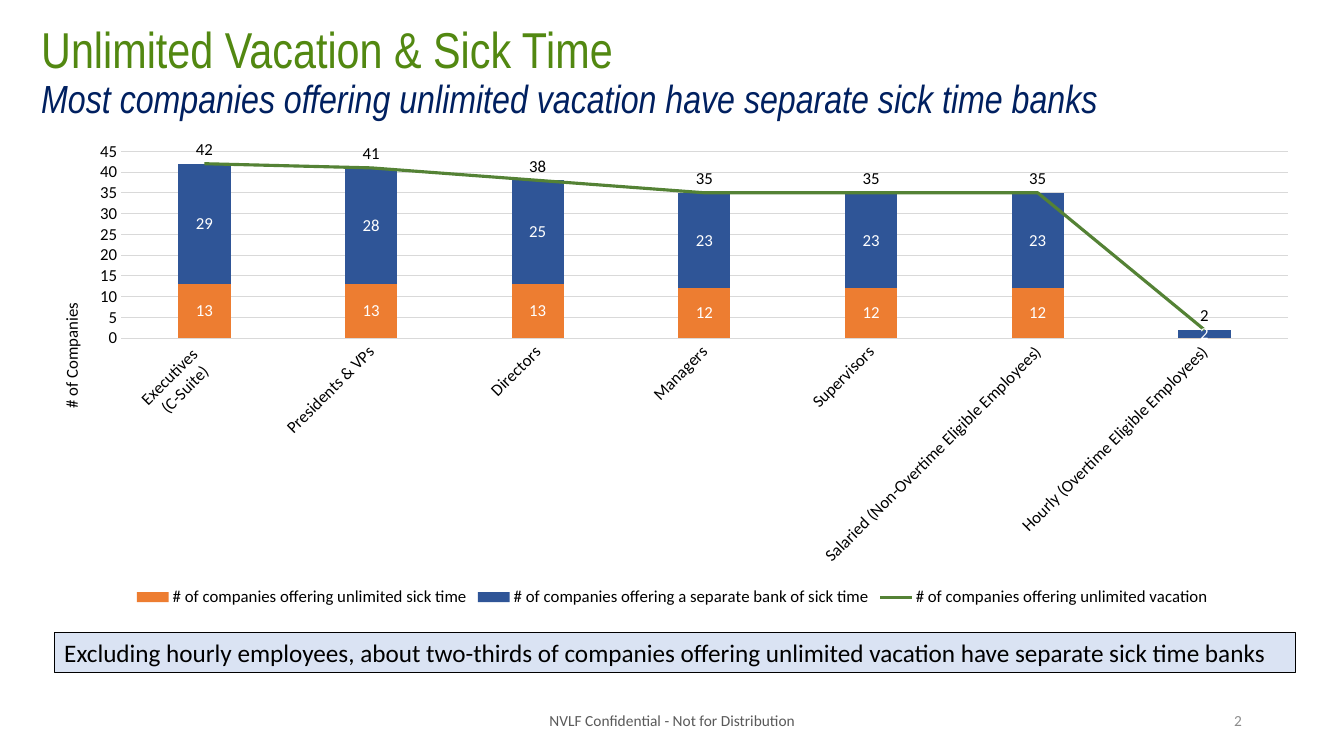
from copy import deepcopy
from dataclasses import dataclass

from pptx import Presentation
from pptx import util as u
from pptx.chart.data import CategoryChartData
from pptx.dml.color import RGBColor
from pptx.enum import chart as charts, shapes, text
from pptx.oxml import parse_xml
from pptx.oxml.ns import nsdecls, qn


@dataclass(frozen=True)
class Theme:
    heading_font: str = "Arial Narrow"
    body_font: str = "Calibri"
    title_size: float = 36
    subtitle_size: float = 28
    callout_size: float = 18
    chart_size: float = 12
    footer_size: float = 11
    white: str = "FFFFFF"
    black: str = "000000"
    green: str = "528811"
    navy: str = "002060"
    footer_grey: str = "595959"
    number_grey: str = "8C8C8C"
    callout_fill: str = "DAE3F3"
    grid: str = "D9D9D9"
    sick_time: str = "ED7D31"
    separate_bank: str = "2F5597"
    vacation: str = "548235"


def style_font(font, name, size, color, italic=False):
    font.name = name
    font.size = u.Pt(size)
    font.color.rgb = RGBColor.from_string(color)
    font.bold = False
    font.italic = italic


def style_line(line, color, width=0.75):
    line.color.rgb = RGBColor.from_string(color)
    line.width = u.Pt(width)


def drop(element, tag):
    for child in element.findall(qn(tag)):
        element.remove(child)


def place(element, index, target=None, **position):
    drop(element, "c:layout")
    inner = f'<c:layoutTarget val="{target}"/>' if target else ""
    modes = "".join(f'<c:{key}Mode val="edge"/>' for key in "xy")
    sizes = "".join(f'<c:{key} val="{value}"/>' for key, value in position.items())
    element.insert(index, parse_xml(
        f'<c:layout {nsdecls("c")}><c:manualLayout>{inner}{modes}{sizes}'
        '</c:manualLayout></c:layout>'))


class SlideBuilder:
    def __init__(self, slide, theme):
        self.slide = slide
        self.theme = theme

    def heading(self, title, subtitle, box):
        t = self.theme
        heading = self.slide.shapes.add_textbox(*map(u.Cm, box))
        heading.fill.solid()
        heading.fill.fore_color.rgb = RGBColor.from_string(t.white)
        frame = heading.text_frame
        frame.word_wrap = True
        frame.vertical_anchor = text.MSO_ANCHOR.MIDDLE
        frame.text = f"{title}\v{subtitle}"
        paragraph = frame.paragraphs[0]
        paragraph.line_spacing = 0.9
        title_run, subtitle_run = paragraph.runs
        style_font(title_run.font, t.heading_font, t.title_size, t.green)
        style_font(subtitle_run.font, t.heading_font, t.subtitle_size, t.navy, True)

    def footer(self, words, box, color, alignment):
        t = self.theme
        frame = self.slide.shapes.add_textbox(*map(u.Cm, box)).text_frame
        frame.word_wrap = True
        frame.vertical_anchor = text.MSO_ANCHOR.MIDDLE
        frame.text = words
        frame.paragraphs[0].alignment = alignment
        style_font(frame.paragraphs[0].runs[0].font, t.body_font, t.footer_size, color)

    def callout(self, words, box):
        t = self.theme
        callout = self.slide.shapes.add_shape(
            shapes.MSO_SHAPE.RECTANGLE, *map(u.Cm, box))
        callout.shadow.inherit = False
        callout.fill.solid()
        callout.fill.fore_color.rgb = RGBColor.from_string(t.callout_fill)
        style_line(callout.line, t.black)
        frame = callout.text_frame
        frame.word_wrap = True
        frame.vertical_anchor = text.MSO_ANCHOR.TOP
        frame.text = words
        frame.paragraphs[0].alignment = text.PP_ALIGN.LEFT
        style_font(frame.paragraphs[0].runs[0].font, t.body_font, t.callout_size, t.black)

    def chart(self, categories, bars, trend, axis_name, box):
        t = self.theme
        data = CategoryChartData()
        data.categories = categories
        for name, values, _ in [*bars, trend]:
            data.add_series(name, values)
        chart = self.slide.shapes.add_chart(
            charts.XL_CHART_TYPE.COLUMN_STACKED, *map(u.Cm, box), data).chart
        style_font(chart.font, t.body_font, t.chart_size, t.black)
        chart.has_title = False
        chart.has_legend = True
        chart.legend.position = charts.XL_LEGEND_POSITION.BOTTOM
        chart.legend.include_in_layout = False
        style_font(chart.legend.font, t.body_font, t.chart_size, t.black)

        columns = chart.plots[0]
        columns.gap_width = 219
        columns.overlap = 100
        columns.vary_by_categories = False
        self.move_last_series_to_line(chart)
        for series, (_, _, color) in zip(columns.series, bars):
            series.format.fill.solid()
            series.format.fill.fore_color.rgb = RGBColor.from_string(color)
            self.label(series, t.white, charts.XL_LABEL_POSITION.CENTER)
        vacation = chart.plots[1].series[0]
        vacation.smooth = False
        vacation.marker.style = charts.XL_MARKER_STYLE.NONE
        style_line(vacation.format.line, trend[2], 2.25)
        self.label(vacation, t.black, charts.XL_LABEL_POSITION.ABOVE)
        self.axes(chart, axis_name)
        plot_area = chart.element.find(".//" + qn("c:plotArea"))
        place(plot_area, 0, "inner", x=0.07, y=0.04, w=0.91, h=0.39)

    def move_last_series_to_line(self, chart):
        bar_chart = chart.element.find(".//" + qn("c:barChart"))
        series = bar_chart.findall(qn("c:ser"))[-1]
        drop(series, "c:invertIfNegative")
        line_chart = parse_xml(
            f'<c:lineChart {nsdecls("c")}><c:grouping val="standard"/>'
            '<c:varyColors val="0"/><c:marker val="1"/></c:lineChart>')
        line_chart.insert(2, series)
        for axis_id in bar_chart.findall(qn("c:axId")):
            line_chart.append(deepcopy(axis_id))
        bar_chart.addnext(line_chart)

    def label(self, series, color, position):
        labels = series.data_labels
        labels.show_value = True
        labels.number_format = "0;;"
        labels.number_format_is_linked = False
        labels.position = position
        style_font(labels.font, self.theme.body_font, self.theme.chart_size, color)

    def axes(self, chart, axis_name):
        t = self.theme
        names, counts = chart.category_axis, chart.value_axis
        for axis in (names, counts):
            axis.major_tick_mark = charts.XL_TICK_MARK.NONE
            axis.minor_tick_mark = charts.XL_TICK_MARK.NONE
            style_font(axis.tick_labels.font, t.body_font, t.chart_size, t.black)
        style_line(names.format.line, t.grid)
        counts.minimum_scale, counts.maximum_scale, counts.major_unit = 0, 45, 5
        counts.format.line.fill.background()
        style_line(counts.major_gridlines.format.line, t.grid)
        frame = counts.axis_title.text_frame
        frame.text = axis_name
        style_font(frame.paragraphs[0].runs[0].font, t.body_font, t.chart_size, t.black)
        category_xml = chart.element.find(".//" + qn("c:catAx"))
        title_xml = chart.element.find(f'.//{qn("c:valAx")}/{qn("c:title")}')
        for element, angle in ((category_xml, -45), (title_xml, -90)):
            body = element.find(".//" + qn("a:bodyPr"))
            body.set("rot", str(angle * 60000))
            body.set("vert", "horz")
        place(title_xml, 1, x=0.02, y=0.35)


def main():
    theme = Theme()
    deck = Presentation()
    deck.slide_width, deck.slide_height = u.Cm(33.87), u.Cm(19.05)
    page = SlideBuilder(deck.slides.add_slide(deck.slide_layouts[6]), theme)
    page.heading("Unlimited Vacation & Sick Time",
                 "Most companies offering unlimited vacation have separate sick time banks",
                 (0.79, 0.08, 30.4, 3.56))
    page.footer("NVLF Confidential - Not for Distribution", (11.23, 17.65, 11.43, 1.02),
                theme.footer_grey, text.PP_ALIGN.CENTER)
    page.footer("2", (23.93, 17.65, 7.62, 1.02), theme.number_grey, text.PP_ALIGN.RIGHT)
    page.callout("Excluding hourly employees, about two-thirds of companies offering "
                 "unlimited vacation have separate sick time banks", (1.37, 15.93, 31.27, 1.02))
    page.chart(
        ["Executives \n(C-Suite)", "Presidents & VPs", "Directors", "Managers", "Supervisors",
         "Salaried (Non-Overtime Eligible Employees)", "Hourly (Overtime Eligible Employees)"],
        [("# of companies offering unlimited sick time",
          (13, 13, 13, 12, 12, 12, 0), theme.sick_time),
         ("# of companies offering a separate bank of sick time",
          (29, 28, 25, 23, 23, 23, 2), theme.separate_bank)],
        ("# of companies offering unlimited vacation",
         (42, 41, 38, 35, 35, 35, 2), theme.vacation),
        "# of Companies", (0.79, 3.33, 32.31, 12.07))
    deck.save("out.pptx")


if __name__ == "__main__":
    main()
